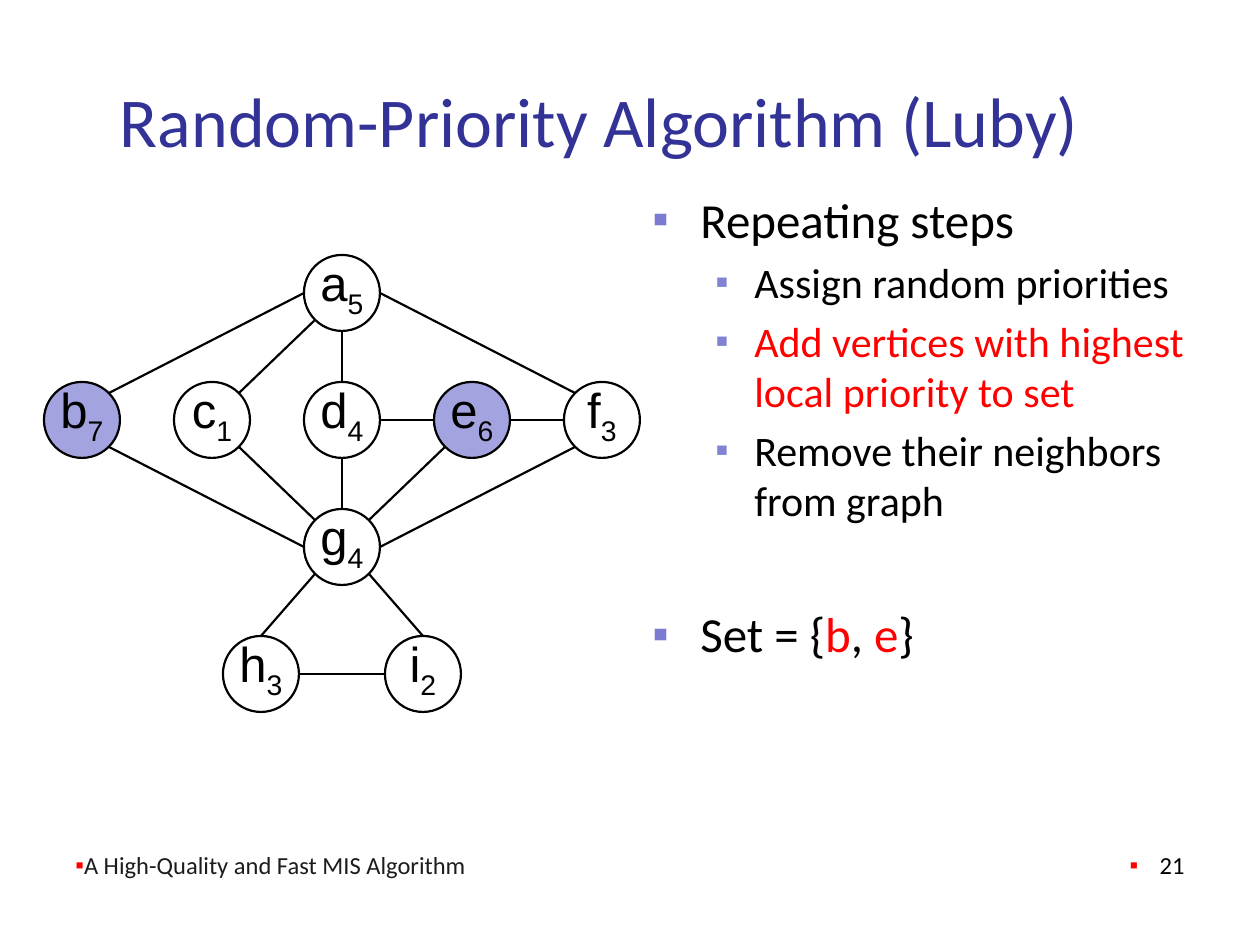
from lxml.etree import SubElement
from pptx import Presentation
from pptx.dml.color import RGBColor
from pptx.enum.shapes import MSO_CONNECTOR, MSO_SHAPE
from pptx.enum.text import MSO_ANCHOR, PP_ALIGN
from pptx.oxml.ns import qn
from pptx.util import Pt

SCALE = 914400 // 126  # EMU per px
HUES = {
    "black": "000000", "title": "333397", "foot": "1C1C1C", "red": "FF0000",
    "mark": "7B7BD1", "submark": "8282D4", "chosen": "A3A3E0",
}
SIZE = 76  # node width
SIDES = {
    "n": (0, -38), "s": (0, 38), "w": (-38, 0), "e": (38, 0),
    "nw": (-27, -27), "ne": (27, -27), "sw": (-27, 27), "se": (27, 27),
}


def px(num):
    return num * SCALE


def hue(name):
    return RGBColor.from_string(HUES[name])


class Deck:
    def __init__(self):
        self.prs = Presentation()
        self.prs.slide_width, self.prs.slide_height = px(1260), px(945)
        self.slide = self.prs.slides.add_slide(self.prs.slide_layouts[6])
        self.shapes = self.slide.shapes

    def box(self, left, top, width, height, anchor=MSO_ANCHOR.TOP):
        frame = self.shapes.add_textbox(*map(px, (left, top, width, height))).text_frame
        frame.word_wrap = True
        frame.vertical_anchor = anchor
        return frame

    def style(self, para, size, color, font="Calibri"):
        para.font.size = Pt(size)
        para.font.name = font
        para.font.color.rgb = hue(color)

    def bullet(self, para, color, percent, left=0, hang=0):
        props = para._p.get_or_add_pPr()
        props.set("marL", str(px(left)))
        props.set("indent", str(px(-hang)))
        tint = SubElement(props, qn("a:buClr"))
        SubElement(tint, qn("a:srgbClr")).set("val", HUES[color])
        SubElement(props, qn("a:buSzPct")).set("val", str(percent * 1000))
        SubElement(props, qn("a:buFont")).set("typeface", "Arial")
        SubElement(props, qn("a:buChar")).set("char", "▪")

    def edge(self, start, end):
        line = self.shapes.add_connector(MSO_CONNECTOR.STRAIGHT, *map(px, start + end))
        line.line.color.rgb = hue("black")
        line.line.width = Pt(1.25)
        SubElement(line._element.spPr, qn("a:effectLst"))

    def node(self, name, rank, mid, chosen):
        x, y = mid
        spot = (x - SIZE // 2, y - SIZE // 2, SIZE, SIZE)
        oval = self.shapes.add_shape(MSO_SHAPE.OVAL, *map(px, spot))
        oval.shadow.inherit = False
        if chosen:
            oval.fill.solid()
            oval.fill.fore_color.rgb = hue("chosen")
        else:
            oval.fill.background()
        oval.line.color.rgb = hue("black")
        oval.line.width = Pt(1.25)
        frame = oval.text_frame
        frame.margin_left = frame.margin_right = 0
        frame.margin_top = frame.margin_bottom = 0
        frame.vertical_anchor = MSO_ANCHOR.BOTTOM
        para = frame.paragraphs[0]
        para.alignment = PP_ALIGN.CENTER
        self.style(para, 28, "black", "Arial")
        para.add_run().text = name
        sub = para.add_run()
        sub.text = str(rank)
        sub._r.get_or_add_rPr().set("baseline", "-25000")


def main():
    deck = Deck()

    # Graph: five columns, four rows, last row centred under g
    cols = [82 + 130 * i for i in range(5)]
    rows = [293 + 127 * i for i in range(4)]
    mids = {name: (x, rows[1]) for name, x in zip("bcdef", cols)}
    mids["a"] = (cols[2], rows[0])
    mids["g"] = (cols[2], rows[2])
    mids["h"] = (cols[2] - 81, rows[3])
    mids["i"] = (cols[2] + 81, rows[3])
    ranks = dict(a=5, b=7, c=1, d=4, e=6, f=3, g=4, h=3, i=2)

    # Edges: node and side at each end
    links = (
        "a w b ne, a sw c ne, a s d n, a e f nw, d e e w, e e f w, "
        "b se g w, c se g nw, d s g n, e sw g ne, f sw g e, "
        "g sw h n, g se i n, h e i w"
    )
    for link in links.split(", "):
        one, out, two, into = link.split()
        ends = [
            tuple(m + d for m, d in zip(mids[name], SIDES[side]))
            for name, side in ((one, out), (two, into))
        ]
        deck.edge(*ends)
    for name, rank in ranks.items():
        deck.node(name, rank, mids[name], name in "be")

    # Title
    frame = deck.box(63, 76, 1134, 88, MSO_ANCHOR.MIDDLE)
    frame.margin_left = px(57)
    para = frame.paragraphs[0]
    para.text = "Random-Priority Algorithm (Luby)"
    deck.style(para, 40, "title")

    # Steps: level, space before, runs with colours
    steps = [
        (0, 0, [("Repeating steps", "black")]),
        (1, 4.8, [("Assign random priorities", "black")]),
        (1, 4.8, [("Add vertices with highest local priority to set", "red")]),
        (1, 4.8, [("Remove their neighbors from graph", "black")]),
        (0, 45, [("Set = {", "black"), ("b", "red"), (", ", "black"),
                 ("e", "red"), ("}", "black")]),
    ]
    frame = deck.box(640, 183, 567, 617)
    for i, (level, gap, runs) in enumerate(steps):
        para = frame.add_paragraph() if i else frame.paragraphs[0]
        para.level = level
        para.space_before = Pt(gap)
        if level:
            deck.bullet(para, "submark", 90, 102, 39)
        else:
            deck.bullet(para, "mark", 95, 48, 48)
        deck.style(para, 24 if level else 28, runs[0][1])
        for text, color in runs:
            run = para.add_run()
            run.text = text
            if color != runs[0][1]:
                run.font.color.rgb = hue(color)

    # Footer and page number
    feet = [
        (63, 872, "A High-Quality and Fast MIS Algorithm", "foot", PP_ALIGN.LEFT, 0),
        (935, 262, "21", "black", PP_ALIGN.RIGHT, 30),
    ]
    for left, width, text, color, align, hang in feet:
        para = deck.box(left, 823, width, 63, MSO_ANCHOR.BOTTOM).paragraphs[0]
        para.text = text
        para.alignment = align
        deck.bullet(para, "red", 100, hang, hang)
        deck.style(para, 14, color)

    deck.prs.save("out.pptx")


if __name__ == "__main__":
    main()
